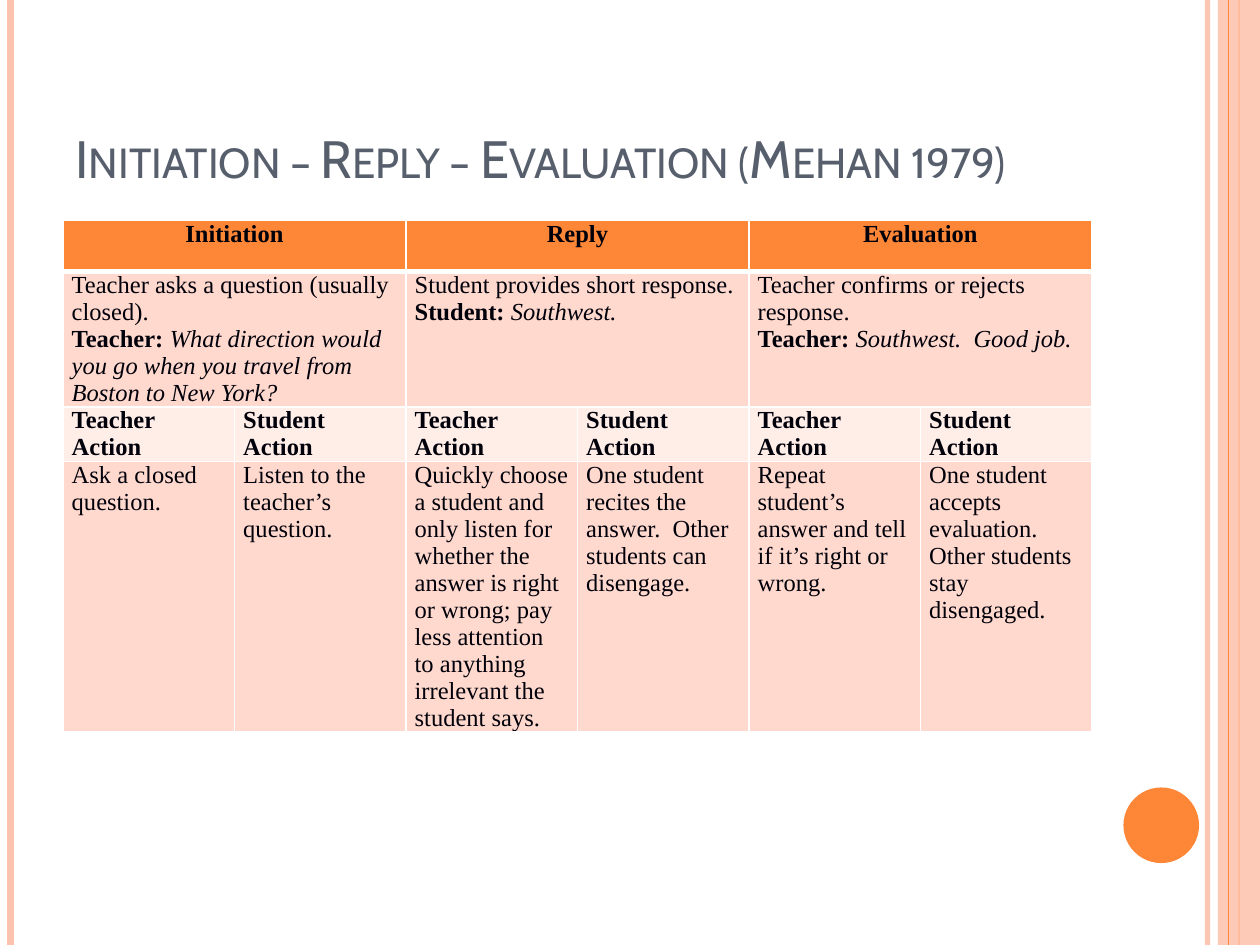
from lxml.etree import SubElement
from pptx import Presentation
from pptx.dml.color import RGBColor
from pptx.enum.shapes import MSO_CONNECTOR, MSO_SHAPE
from pptx.enum.text import MSO_ANCHOR, MSO_AUTO_SIZE, PP_ALIGN
from pptx.oxml.ns import qn
from pptx.util import Pt

ORANGE = RGBColor(0xFE, 0x86, 0x37)
PEACH = RGBColor(0xFE, 0xC3, 0xAE)
ROSE = RGBColor(0xFF, 0xD9, 0xCE)
BLUSH = RGBColor(0xFF, 0xED, 0xE8)
SLATE = RGBColor(0x57, 0x5F, 0x6D)
INK = RGBColor(0x00, 0x00, 0x0A)
WHITE = RGBColor(0xFF, 0xFF, 0xFF)

HEADERS = ["Initiation", "Reply", "Evaluation"]
EXAMPLES = [
    ("Teacher asks a question (usually closed).", "Teacher: ",
     "What direction would you go when you travel from Boston to New York?"),
    ("Student provides short response.", "Student: ", "Southwest."),
    ("Teacher confirms or rejects response.", "Teacher: ",
     "Southwest.  Good job."),
]
ROLES = ["Teacher Action", "Student Action"] * 3
ACTIONS = [
    "Ask a closed question.",
    "Listen to the teacher’s question.",
    "Quickly choose a student and only listen for whether the answer is right "
    "or wrong; pay less attention to anything irrelevant the student says.",
    "One student recites the answer.  Other students can disengage.",
    "Repeat student’s answer and tell if it’s right or wrong.",
    "One student accepts evaluation.  Other students stay disengaged.",
]


def set_alpha(fill_parent, percent):
    """Make the solid fill below an element partly transparent."""
    color = fill_parent.find(qn("a:solidFill"))[0]
    SubElement(color, qn("a:alpha"), val=str(percent * 1000))


def add_rule(slide, x, top, height, color, width, alpha=100):
    """Draw a vertical rule."""
    line = slide.shapes.add_connector(
        MSO_CONNECTOR.STRAIGHT, Pt(x), Pt(top), Pt(x), Pt(top + height))
    line.line.color.rgb = color
    line.line.width = Pt(width)
    sp_pr = line._element.spPr
    if alpha < 100:
        set_alpha(sp_pr.find(qn("a:ln")), alpha)
    SubElement(sp_pr, qn("a:effectLst"))


def add_block(slide, kind, left, top, width, height, color):
    """Draw a plain filled shape and return it."""
    sp = slide.shapes.add_shape(kind, Pt(left), Pt(top), Pt(width), Pt(height))
    sp.shadow.inherit = False
    sp.fill.solid()
    sp.fill.fore_color.rgb = color
    sp.line.fill.background()
    return sp


def add_frame(slide, left, top, width, height):
    """Decorate both side edges of the given box."""
    right = left + width
    add_rule(slide, right - 30, top, height, PEACH, 3, 93)
    add_rule(slide, left + 6, top, height, PEACH, 4.5)
    add_rule(slide, right - 12, top, height, ORANGE, 1.5)
    band = add_block(slide, MSO_SHAPE.RECTANGLE, right - 24, top, 24, height, PEACH)
    set_alpha(band._element.spPr, 87)
    add_rule(slide, right - 18, top, height, ORANGE, 0.75)
    add_block(slide, MSO_SHAPE.OVAL, right - 78, top + height - 90, 43.2, 43.2, ORANGE)


def add_title(slide, left, top, width, height, text):
    """Place the title in small capitals at the bottom of its box."""
    title = slide.shapes.title
    title.left, title.top = Pt(left), Pt(top)
    title.width, title.height = Pt(width), Pt(height)
    tf = title.text_frame
    tf.text = text
    tf.word_wrap = True
    tf.auto_size = MSO_AUTO_SIZE.NONE
    tf.vertical_anchor = MSO_ANCHOR.BOTTOM
    p = tf.paragraphs[0]
    p.alignment = PP_ALIGN.LEFT
    p.font.name, p.font.size = "Cabin", Pt(30)
    p.font.color.rgb = SLATE
    p.runs[0].font._element.set("cap", "small")


def style_cell(cell, color, top=1, bottom=1):
    """Give a cell its margins, white borders and fill."""
    cell.margin_left = cell.margin_right = Pt(5)
    cell.margin_top = cell.margin_bottom = Pt(0)
    tc_pr = cell._tc.get_or_add_tcPr()
    for side, width in zip("LRTB", (1, 1, top, bottom)):
        ln = SubElement(tc_pr, qn(f"a:ln{side}"), w=str(Pt(width)))
        fill = SubElement(ln, qn("a:solidFill"))
        SubElement(fill, qn("a:srgbClr"), val=str(WHITE))
    cell.fill.solid()
    cell.fill.fore_color.rgb = color


def add_text(p, *runs, align=PP_ALIGN.LEFT):
    """Fill a paragraph with (text, bold, italic) runs."""
    p.alignment = align
    p.font.name, p.font.size = "Times New Roman", Pt(14)
    p.font.color.rgb = INK
    for text, bold, italic in runs:
        r = p.add_run()
        r.text = text
        r.font.bold, r.font.italic = bold, italic


def add_sequence_table(slide, left, top, width, height):
    """Build the table of the three steps and their actions."""
    frame = slide.shapes.add_table(4, 6, Pt(left), Pt(top), Pt(width), Pt(height))
    table = frame.table
    table.first_row = table.horz_banding = False
    for col in table.columns:
        col.width = Pt(width / 6)
    for row in table.rows:
        row.height = Pt(29.2)
    frame.height = Pt(height)

    looks = [(ORANGE, 1, 3), (ROSE, 3, 1), (BLUSH, 1, 1), (ROSE, 1, 1)]
    for row, look in zip(table.rows, looks):
        for cell in row.cells:
            style_cell(cell, *look)

    for i, (header, (summary, speaker, quote)) in enumerate(zip(HEADERS, EXAMPLES)):
        for row in range(2):
            table.cell(row, 2 * i).merge(table.cell(row, 2 * i + 1))
        add_text(table.cell(0, 2 * i).text_frame.paragraphs[0],
                 (header, True, False), align=PP_ALIGN.CENTER)
        tf = table.cell(1, 2 * i).text_frame
        add_text(tf.paragraphs[0], (summary, False, False))
        add_text(tf.add_paragraph(), (speaker, True, False), (quote, False, True))

    for row, texts, bold in ((2, ROLES, True), (3, ACTIONS, False)):
        for col, text in enumerate(texts):
            add_text(table.cell(row, col).text_frame.paragraphs[0],
                     (text, bold, False))


def main():
    """Build and save the slide."""
    prs = Presentation()
    prs.slide_width, prs.slide_height = Pt(720), Pt(540)
    slide = prs.slides.add_slide(prs.slide_layouts[5])
    add_frame(slide, 0, 0, 720, 540)
    add_title(slide, 36, 21.6, 588, 90,
              "Initiation – Reply – Evaluation (Mehan 1979)")
    add_sequence_table(slide, 36, 126, 588, 332)
    prs.save("out.pptx")


if __name__ == "__main__":
    main()
